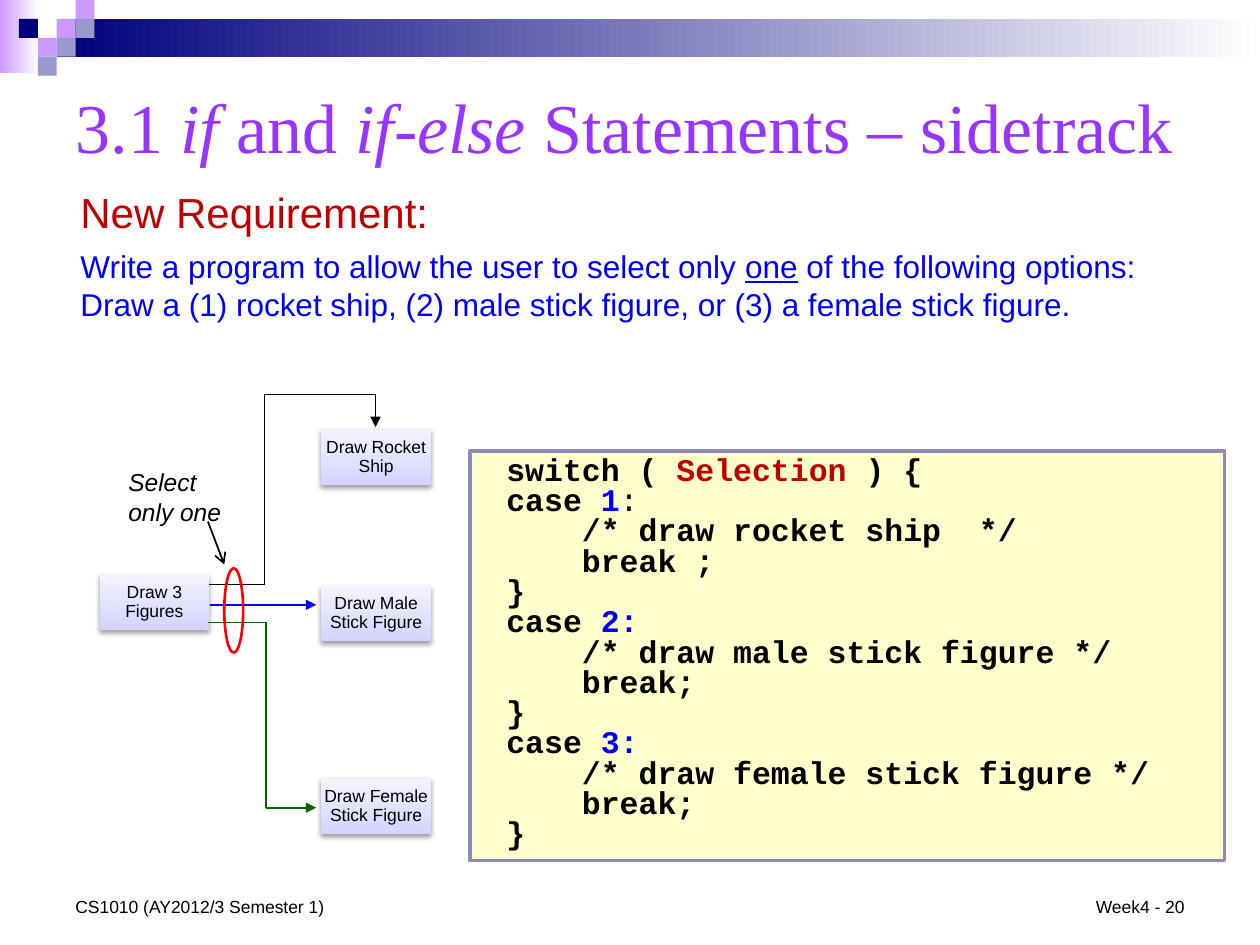
from lxml import etree
from pptx import Presentation
from pptx.dml.color import RGBColor
from pptx.enum.shapes import MSO_CONNECTOR, MSO_SHAPE
from pptx.enum.text import MSO_ANCHOR, PP_ALIGN
from pptx.oxml.ns import qn
from pptx.util import Inches, Pt

STRAIGHT = MSO_CONNECTOR.STRAIGHT
RECTANGLE, OVAL = MSO_SHAPE.RECTANGLE, MSO_SHAPE.OVAL
TOP, MIDDLE, BOTTOM = MSO_ANCHOR.TOP, MSO_ANCHOR.MIDDLE, MSO_ANCHOR.BOTTOM
LEFT, CENTER, RIGHT = PP_ALIGN.LEFT, PP_ALIGN.CENTER, PP_ALIGN.RIGHT

BLACK, WHITE, RED, BLUE = "000000", "FFFFFF", "C00000", "0000FF"
GREEN, NAVY, LILAC, GREY_BLUE = "006600", "00007D", "CC99FF", "9999CC"


def color(value):
    return RGBColor.from_string(value)


def inches(box):
    return [Inches(value) for value in box]


def write(paragraph, *runs, size=18, font="Arial", fill=BLACK, align=LEFT,
          bold=False, italic=False, spacing=None, after=0):
    """Fill a paragraph; a run is a text or a (text, overrides) pair."""
    paragraph.alignment = align
    paragraph.space_before, paragraph.space_after = Pt(0), Pt(after)
    if spacing:
        paragraph.line_spacing = spacing
    for item in runs:
        text, changes = (item, {}) if isinstance(item, str) else item
        run = paragraph.add_run()
        run.text = text
        run.font.name, run.font.size = font, Pt(size)
        run.font.bold = changes.get("bold", bold)
        run.font.italic = changes.get("italic", italic)
        run.font.underline = changes.get("underline", False)
        run.font.color.rgb = color(changes.get("fill", fill))


def prepare_frame(shape, anchor=TOP, margin=None):
    frame = shape.text_frame
    frame.word_wrap = True
    frame.vertical_anchor = anchor
    if margin is not None:
        frame.margin_left = frame.margin_right = Inches(margin)
        frame.margin_top = frame.margin_bottom = Inches(margin)
    return frame


def add_text(slide, box, anchor=TOP):
    return prepare_frame(slide.shapes.add_textbox(*inches(box)), anchor)


def add_box(slide, box, fill=None, line=None, width=1, gradient=None, angle=0,
            preset=RECTANGLE):
    shape = slide.shapes.add_shape(preset, *inches(box))
    if gradient:
        shape.fill.gradient()
        shape.fill.gradient_angle = angle
        for stop, value in zip(shape.fill.gradient_stops, gradient):
            stop.color.rgb = color(value)
    elif fill:
        shape.fill.solid()
        shape.fill.fore_color.rgb = color(fill)
    else:
        shape.fill.background()
    if line:
        shape.line.color.rgb = color(line)
        shape.line.width = Pt(width)
    else:
        shape.line.fill.background()
    shape.shadow.inherit = False
    return shape


def add_soft_shadow(shape):
    effects = shape._element.spPr.find(qn("a:effectLst"))
    shadow = etree.SubElement(effects, qn("a:outerShdw"), blurRad=str(Pt(3.1)),
                              dist=str(Pt(1.6)), dir="5400000", rotWithShape="0")
    shade = etree.SubElement(shadow, qn("a:srgbClr"), val=BLACK)
    etree.SubElement(shade, qn("a:alpha"), val="38000")


def add_line(slide, start, end, line=BLACK, head=None):
    connector = slide.shapes.add_connector(STRAIGHT, *inches(start + end))
    connector.line.color.rgb = color(line)
    connector.line.width = Pt(1)
    if head:
        etree.SubElement(connector.line._get_or_add_ln(), qn("a:tailEnd"), type=head)
    etree.SubElement(connector._element.spPr, qn("a:effectLst"))


def add_banner(slide, left, top, width):
    # Fading bands
    add_box(slide, (left, top, 0.31, 0.58), gradient=(LILAC, WHITE))
    add_box(slide, (left + 0.45, top + 0.15, width - 0.45, 0.3), gradient=(NAVY, WHITE))
    # Checkered squares, as column, row and colour
    side = 0.15
    for column, row, fill in ((3, 1, LILAC), (4, 0, LILAC), (4, 1, GREY_BLUE),
                              (2, 2, LILAC), (1, 1, NAVY), (3, 2, GREY_BLUE),
                              (2, 3, GREY_BLUE)):
        add_box(slide, (left + column * side, top + row * side, side, side), fill)


def set_title(slide, box):
    title = slide.shapes.title
    title.left, title.top, title.width, title.height = inches(box)
    frame = prepare_frame(title, MIDDLE)
    write(frame.paragraphs[0], "3.1 ", ("if", {"italic": True}), " and ",
          ("if-else", {"italic": True}), " Statements – sidetrack",
          size=40, font="Times New Roman", fill="9933FF")


def add_requirement(slide, box):
    frame = add_text(slide, box)
    write(frame.paragraphs[0], "New Requirement:", size=24, fill=RED, after=6)
    write(frame.add_paragraph(), "Write a program to allow the user to select only ",
          ("one", {"underline": True}), " of the following options:", fill=BLUE)
    write(frame.add_paragraph(), "Draw a (1) rocket ship, (2) male stick figure, "
          "or (3) a female stick figure.", fill=BLUE)


def add_step(slide, left, top, text):
    shape = add_box(slide, (left, top, 0.87, 0.44), gradient=("D4D4FF", "F3F3FF"), angle=90)
    add_soft_shadow(shape)
    frame = prepare_frame(shape, MIDDLE, 0.01)
    write(frame.paragraphs[0], text, size=10, align=CENTER, spacing=0.9)


def add_route(slide, points, line):
    """Join the points with lines; the last one carries the arrowhead."""
    last = len(points) - 2
    for index, (start, end) in enumerate(zip(points, points[1:])):
        add_line(slide, start, end, line, "triangle" if index == last else None)


def add_diagram(slide, left, top):
    def at(x, y):
        return left + x, top + y

    # Steps
    for x, y, text in ((0, 1.43, "Draw 3 Figures"), (1.76, 0.28, "Draw Rocket Ship"),
                       (1.76, 1.52, "Draw Male Stick Figure"),
                       (1.76, 3.05, "Draw Female Stick Figure")):
        add_step(slide, *at(x, y), text)
    # Routes to the three figures
    add_route(slide, [at(0.87, 1.51), at(1.31, 1.51), at(1.31, 0), at(2.19, 0),
                      at(2.19, 0.26)], BLACK)
    add_route(slide, [at(0.88, 1.67), at(1.72, 1.67)], BLUE)
    add_route(slide, [at(0.86, 1.81), at(1.32, 1.81), at(1.32, 3.28), at(1.72, 3.28)], GREEN)
    # Remark
    add_box(slide, (*at(0.99, 1.38), 0.15, 0.67), line="FF0000", width=1.5, preset=OVAL)
    note = add_text(slide, (*at(0.13, 0.53), 1.08, 0.57))
    write(note.paragraphs[0], "Select only one", size=14, italic=True)
    add_line(slide, at(0.86, 1.01), at(0.99, 1.35), head="arrow")


def add_code(slide, box):
    frame = prepare_frame(add_box(slide, box, "FFFFCC", "8A8AB9", 2))
    number = {"fill": BLUE}
    # Each line is its indent level and its runs
    lines = [(0, ["switch ( ", ("Selection ", {"fill": RED}), ") {"])]
    for label, comment, end in (
            (["case ", ("1", number), (":", {"bold": False})], "rocket ship  ", "break ;"),
            (["case", (" 2:", number)], "male stick figure ", "break;"),
            (["case", (" 3:", number)], "female stick figure ", "break;")):
        lines += [(0, label), (1, [f"/* draw {comment}*/"]), (1, [end]), (0, ["}"])]
    for index, (level, runs) in enumerate(lines):
        paragraph = frame.add_paragraph() if index else frame.paragraphs[0]
        write(paragraph, *runs, font="Courier New", bold=True, spacing=0.8)
        properties = paragraph._p.get_or_add_pPr()
        properties.set("marL", str(Inches(0.19 + 0.6 * level)))
        properties.set("indent", "0")


def add_footer(slide, left, top, width):
    course = add_text(slide, (left, top, 3.17, 0.5), BOTTOM)
    write(course.paragraphs[0], "CS1010 (AY2012/3 Semester 1)", size=10)
    page = add_text(slide, (left + width - 2.33, top, 2.33, 0.5), BOTTOM)
    write(page.paragraphs[0], "Week4 - 20", size=10, align=RIGHT)


def main():
    presentation = Presentation()
    presentation.slide_width, presentation.slide_height = Inches(10), Inches(7.5)
    slide = presentation.slides.add_slide(presentation.slide_layouts[5])
    add_banner(slide, 0, 0, 10)
    set_title(slide, (0.5, 0.5, 9, 1))
    add_requirement(slide, (0.54, 1.43, 8.93, 1.19))
    add_footer(slide, 0.5, 6.83, 9)
    add_diagram(slide, 0.79, 3.13)
    add_code(slide, (3.73, 3.58, 5.99, 3.25))
    presentation.save("out.pptx")


if __name__ == "__main__":
    main()
